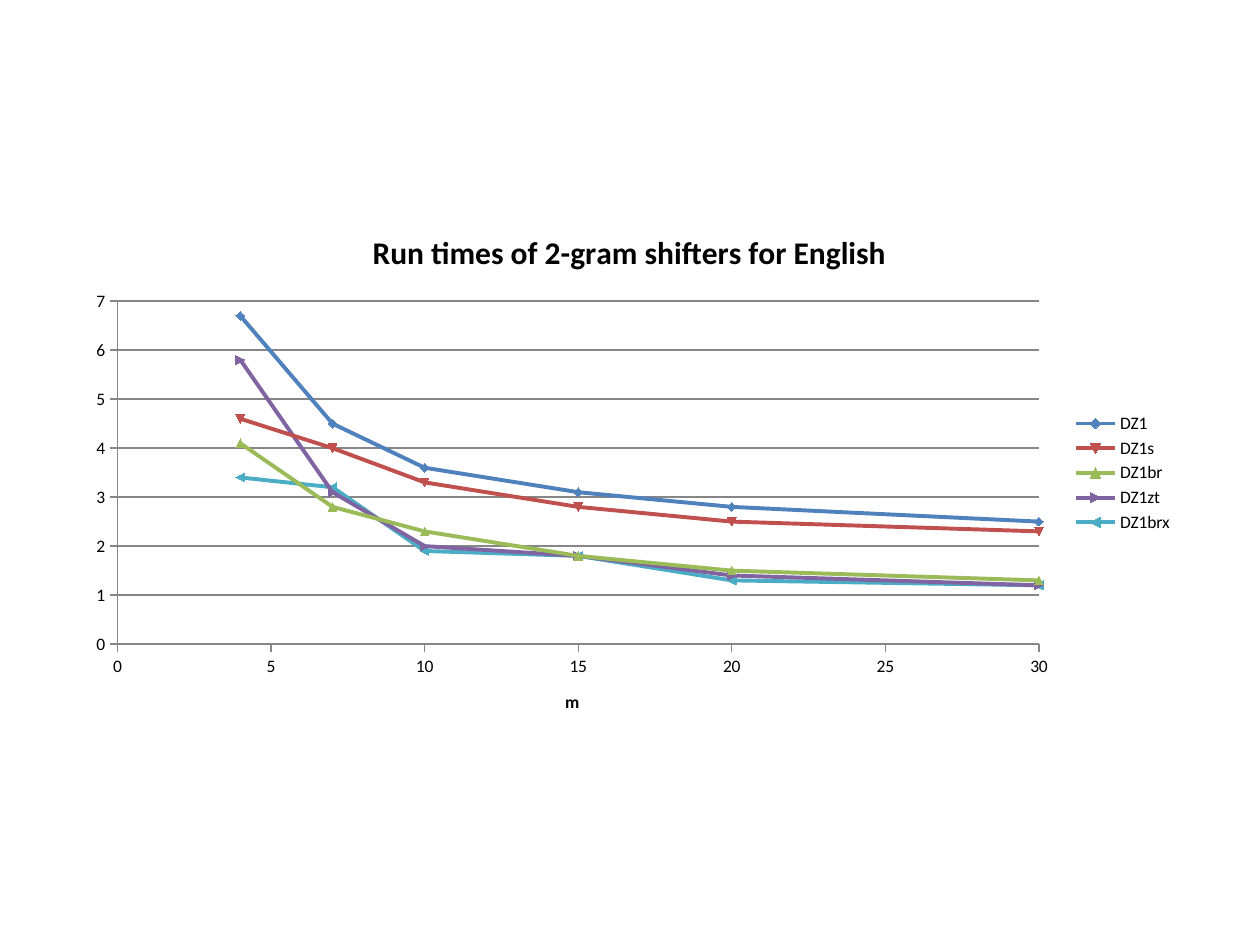
from lxml import etree
from pptx import Presentation
from pptx import util as u
from pptx.chart.data import XyChartData
from pptx.dml.color import RGBColor
from pptx.enum import chart as c
from pptx.oxml import ns

# Content
TITLE = "Run times of 2-gram shifters for English"
X_TITLE = "m"
LENGTHS = [4, 7, 10, 15, 20, 30]
RUN_TIMES = {
    "DZ1": [6.7, 4.5, 3.6, 3.1, 2.8, 2.5],
    "DZ1s": [4.6, 4, 3.3, 2.8, 2.5, 2.3],
    "DZ1br": [4.1, 2.8, 2.3, 1.8, 1.5, 1.3],
    "DZ1zt": [5.8, 3.1, 2, 1.8, 1.4, 1.2],
    "DZ1brx": [3.4, 3.2, 1.9, 1.8, 1.3, 1.2],
}
COLORS = {
    "DZ1": "4F81BD", "DZ1s": "C0504D", "DZ1br": "9BBB59",
    "DZ1zt": "8064A2", "DZ1brx": "4BACC6",
    "text": "000000", "axis": "868686",
}
FONT = "Calibri"

# Geometry in px: left, top, width, height
PX = u.Inches(1) // 126
PAGE = (1260, 945)
CHART = (73, 207, 1113, 532)
PLOT = (117, 301, 922, 343)


def color(name):
    return RGBColor.from_string(COLORS[name])


def style_font(font, size, bold=False):
    font.name, font.size, font.bold = FONT, u.Pt(size), bold
    font.color.rgb = color("text")


def add_title(owner, words, size):
    frame = owner.text_frame
    span = frame.paragraphs[0].add_run()
    span.text = words
    style_font(span.font, size, True)


def style_line(line, name, width):
    line.color.rgb = color(name)
    line.width = u.Pt(width)


def place_plot(chart):
    """Fix the inner plot area as fractions of the chart frame."""
    left, top, width, height = CHART
    fractions = {
        "x": (PLOT[0] - left) / width, "y": (PLOT[1] - top) / height,
        "w": PLOT[2] / width, "h": PLOT[3] / height,
    }
    plot_area = chart.plots[0]._element.getparent()
    for old in plot_area.findall(ns.qn("c:layout")):
        plot_area.remove(old)
    layout = etree.Element(ns.qn("c:layout"))
    manual = etree.SubElement(layout, ns.qn("c:manualLayout"))
    settings = [("layoutTarget", "inner"), ("xMode", "edge"), ("yMode", "edge")]
    settings += [(key, f"{value:.3f}") for key, value in fractions.items()]
    for tag, value in settings:
        etree.SubElement(manual, ns.qn("c:" + tag)).set("val", value)
    plot_area.insert(0, layout)


deck = Presentation()
deck.slide_width, deck.slide_height = (side * PX for side in PAGE)
page = deck.slides.add_slide(deck.slide_layouts[6])

# Chart with its data
data = XyChartData()
for name, times in RUN_TIMES.items():
    series = data.add_series(name)
    for length, time in zip(LENGTHS, times):
        series.add_data_point(length, time)
chart = page.shapes.add_chart(
    c.XL_CHART_TYPE.XY_SCATTER_SMOOTH, *(n * PX for n in CHART), data).chart
style_font(chart.font, 10)
place_plot(chart)

# Titles and legend
chart.has_title = True
add_title(chart.chart_title, TITLE, 18)
chart.has_legend = True
chart.legend.position = c.XL_LEGEND_POSITION.RIGHT
chart.legend.include_in_layout = False
style_font(chart.legend.font, 10)

# Axes
for axis, top, step in ((chart.category_axis, 30, 5), (chart.value_axis, 7, 1)):
    axis.minimum_scale, axis.maximum_scale, axis.major_unit = 0, top, step
    axis.major_tick_mark = c.XL_TICK_MARK.OUTSIDE
    axis.minor_tick_mark = c.XL_TICK_MARK.NONE
    axis.tick_labels.number_format = "General"
    axis.tick_labels.number_format_is_linked = False
    style_font(axis.tick_labels.font, 10)
    style_line(axis.format.line, "axis", 0.75)
chart.category_axis.has_major_gridlines = False
chart.value_axis.has_major_gridlines = True
style_line(chart.value_axis.major_gridlines.format.line, "axis", 0.75)
chart.category_axis.has_title = True
add_title(chart.category_axis.axis_title, X_TITLE, 10)

# Series curves and markers
chart.plots[0].vary_by_categories = False
for series in chart.plots[0].series:
    series.smooth = True
    style_line(series.format.line, series.name, 2.25)
    marker = series.marker.format
    marker.fill.solid()
    marker.fill.fore_color.rgb = color(series.name)
    style_line(marker.line, series.name, 0.75)

deck.save("out.pptx")
